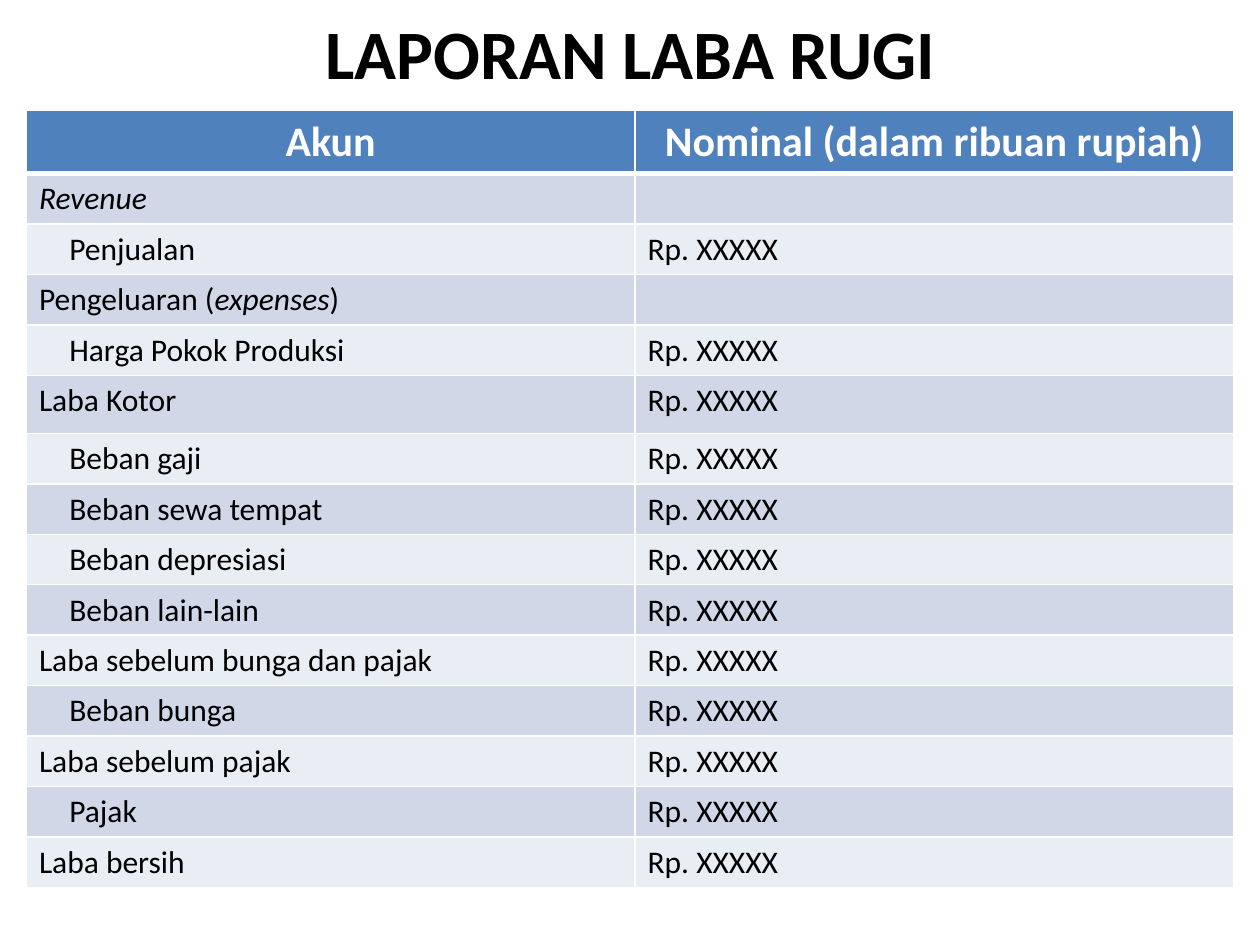
from lxml import etree
from pptx import Presentation
from pptx import util as u
from pptx.dml.color import RGBColor
from pptx.enum import text
from pptx.oxml.ns import qn

COLORS = {"ink": "000000", "paper": "FFFFFF", "header": "4F81BD",
          "dark_band": "D0D8E8", "light_band": "E9EDF4"}
FONT = "Calibri"
WIDTH, HEIGHT = 10, 7.5
AMOUNT = "Rp. XXXXX"


def write(para, wording, size=18, color="ink", bold=False, italic=False,
          align=None, indent=0):
    """Add one run; text between asterisks switches to italic."""
    para.alignment = align
    if indent:
        props = para._p.get_or_add_pPr()
        props.set("marL", str(u.Inches(indent)))
        props.set("indent", "0")
    for index, part in enumerate(wording.split("*")):
        if not part:
            continue
        span = para.add_run()
        span.text = part
        span.font.name = FONT
        span.font.size = u.Pt(size)
        span.font.bold = bold
        span.font.italic = italic or index % 2 == 1
        span.font.color.rgb = RGBColor.from_string(COLORS[color])


class Page:
    def __init__(self, deck):
        self.slide = deck.slides.add_slide(deck.slide_layouts[6])

    def area(self, left, top, width, height):
        """Turn shares of the slide's size into lengths."""
        return (u.Inches(left * WIDTH), u.Inches(top * HEIGHT),
                u.Inches(width * WIDTH), u.Inches(height * HEIGHT))

    def title(self, wording, *shares):
        frame = self.slide.shapes.add_textbox(*self.area(*shares)).text_frame
        frame.word_wrap = True
        frame.margin_top, frame.margin_bottom = u.Inches(0.07), 0
        write(frame.paragraphs[0], wording, size=39.6, bold=True,
              align=text.PP_ALIGN.CENTER)

    def border(self, cell, side, points):
        line = etree.SubElement(cell._tc.get_or_add_tcPr(), qn("a:ln" + side),
                                w=str(u.Pt(points)))
        fill = etree.SubElement(line, qn("a:solidFill"))
        etree.SubElement(fill, qn("a:srgbClr"), val=COLORS["paper"])

    def style_cell(self, cell, row):
        for side in "LRTB":
            thick = (row, side) in ((0, "B"), (1, "T"))
            self.border(cell, side, 3 if thick else 1)
        band = "header" if row == 0 else ("light_band", "dark_band")[row % 2]
        cell.fill.solid()
        cell.fill.fore_color.rgb = RGBColor.from_string(COLORS[band])

    def table(self, headings, accounts, column_widths, row_heights, *shares):
        table = self.slide.shapes.add_table(
            len(accounts) + 1, len(headings), *self.area(*shares)).table
        for column, width in zip(table.columns, column_widths):
            column.width = u.Inches(width)
        for row, height in zip(table.rows, row_heights):
            row.height = u.Inches(height)
        for cell, heading in zip(table.rows[0].cells, headings):
            self.style_cell(cell, 0)
            write(cell.text_frame.paragraphs[0], heading, size=24,
                  color="paper", bold=True, align=text.PP_ALIGN.CENTER)
        for row, (name, level, amount) in enumerate(accounts, 1):
            for column, wording in enumerate((name, amount)):
                cell = table.cell(row, column)
                self.style_cell(cell, row)
                write(cell.text_frame.paragraphs[0], wording,
                      indent=0 if column else 0.24 * level)


# Account, indent level, amount
ACCOUNTS = [
    ("*Revenue*", 0, ""),
    ("Penjualan", 1, AMOUNT),
    ("Pengeluaran (*expenses*)", 0, ""),
    ("Harga Pokok Produksi", 1, AMOUNT),
    ("Laba Kotor", 0, AMOUNT),
    ("Beban gaji", 1, AMOUNT),
    ("Beban sewa tempat", 1, AMOUNT),
    ("Beban depresiasi", 1, AMOUNT),
    ("Beban lain-lain", 1, AMOUNT),
    ("Laba sebelum bunga dan pajak", 0, AMOUNT),
    ("Beban bunga", 1, AMOUNT),
    ("Laba sebelum pajak", 0, AMOUNT),
    ("Pajak", 1, AMOUNT),
    ("Laba bersih", 0, AMOUNT),
]


def main():
    deck = Presentation()
    deck.slide_width, deck.slide_height = u.Inches(WIDTH), u.Inches(HEIGHT)
    page = Page(deck)

    # Heading
    page.title("LAPORAN LABA RUGI", 0.067, 0.001, 0.867, 0.093)

    # Income statement; the gross profit row is a little taller
    heights = [0.46 if name == "Laba Kotor" else 0.4
               for name, _, _ in ACCOUNTS]
    page.table(("Akun", "Nominal (dalam ribuan rupiah)"), ACCOUNTS,
               (4.83, 4.75), [0.5] + heights, 0.021, 0.117, 0.958, 0.83)

    deck.save("out.pptx")


if __name__ == "__main__":
    main()
